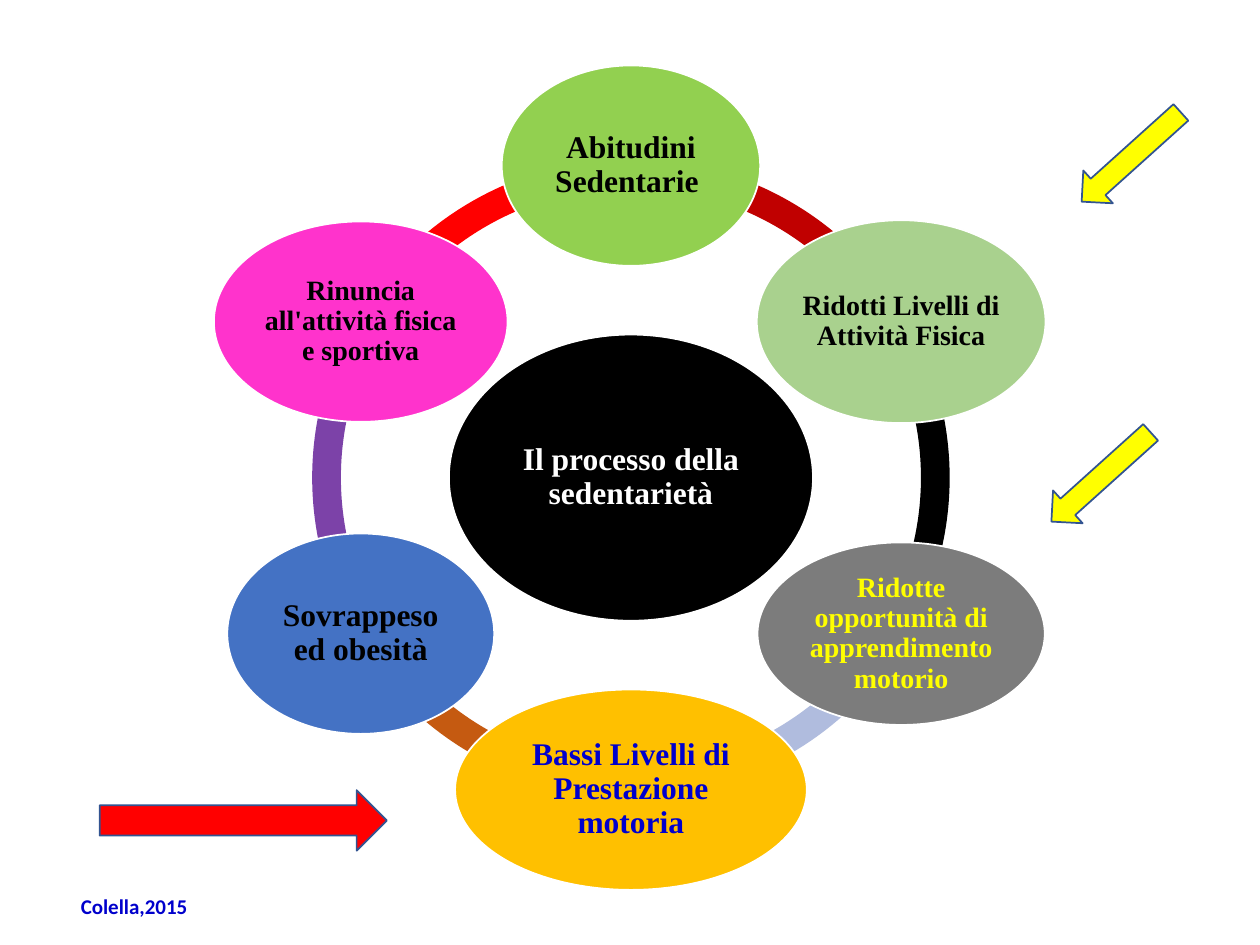
import math
from lxml import etree
from pptx import Presentation
from pptx import util as u
from pptx.dml.color import RGBColor
from pptx.enum import shapes, text
from pptx.oxml.ns import qn

BLACK = RGBColor(0x00, 0x00, 0x00)
WHITE = RGBColor(0xFF, 0xFF, 0xFF)
RED = RGBColor(0xFF, 0x00, 0x00)
DARK_RED = RGBColor(0xC0, 0x00, 0x00)
YELLOW = RGBColor(0xFF, 0xFF, 0x00)
GOLD = RGBColor(0xFF, 0xC0, 0x00)
LIME = RGBColor(0x92, 0xD0, 0x50)
SAGE = RGBColor(0xA9, 0xD1, 0x8E)
GRAY = RGBColor(0x7C, 0x7C, 0x7C)
BLUE = RGBColor(0x44, 0x72, 0xC4)
PINK = RGBColor(0xFF, 0x33, 0xCC)
PURPLE = RGBColor(0x70, 0x30, 0xA0)
RUST = RGBColor(0xC5, 0x5A, 0x11)
LAVENDER = RGBColor(0xB0, 0xBC, 0xDE)
INK = RGBColor(0x00, 0x00, 0xCC)
OUTLINE = RGBColor(0x32, 0x54, 0x91)

CX, CY, RADIUS, RING = 12.72, 9.63, 6.29, 12.85

prs = Presentation()
prs.slide_width, prs.slide_height = u.Cm(25.4), u.Cm(19.05)
s = prs.slides.add_slide(prs.slide_layouts[6])


def add_shape(kind, x, y, w, h, fill, line=None):
    sp = s.shapes.add_shape(kind, u.Cm(x), u.Cm(y), u.Cm(w), u.Cm(h))
    sp.shadow.inherit = False
    sp.fill.solid()
    sp.fill.fore_color.rgb = fill
    if line is None:
        sp.line.fill.background()
    else:
        sp.line.color.rgb = line
        sp.line.width = u.Pt(1)
    return sp


def set_text(sp, content, font, size, color):
    tf = sp.text_frame
    tf.word_wrap = True
    p = tf.paragraphs[0]
    p.text = content
    p.alignment = text.PP_ALIGN.CENTER
    p.font.name = font
    p.font.size = u.Pt(size)
    p.font.bold = True
    p.font.color.rgb = color
    return tf


for i, color in enumerate([DARK_RED, BLACK, LAVENDER, RUST, PURPLE, RED]):
    sp = add_shape(shapes.MSO_SHAPE.BLOCK_ARC, CX - RING / 2, CY - RING / 2, RING, RING, color)
    sp.adjustments[0] = (162 + 36 * i) % 216
    sp.adjustments[1] = (198 + 36 * i) % 216
    sp.adjustments[2] = 0.045
    if color == PURPLE:
        clr = sp.fill._xPr.find(qn("a:solidFill"))[0]
        etree.SubElement(clr, qn("a:alpha")).set("val", "91000")

hub = (CX, CY, 7.34, 5.77, BLACK, "Il processo della sedentarietà", 18, WHITE)
nodes = [
    (5.21, 4.04, LIME, "Abitudini Sedentarie ", 18, BLACK),
    (5.82, 4.09, SAGE, "Ridotti Livelli di Attività Fisica", 16, BLACK),
    (5.79, 3.68, GRAY, "Ridotte opportunità di apprendimento motorio", 16, YELLOW),
    (7.09, 4.04, GOLD, "Bassi Livelli di Prestazione motoria", 18, INK),
    (5.38, 4.04, BLUE, "Sovrappeso ed obesità", 18, BLACK),
    (5.92, 4.04, PINK, "Rinuncia all'attività fisica e sportiva", 16, BLACK),
]
ellipses = [hub]
for i, node in enumerate(nodes):
    angle = math.radians(60 * i)
    ellipses.append((CX + RADIUS * math.sin(angle), CY - RADIUS * math.cos(angle), *node))

for x, y, w, h, fill, label, size, color in ellipses:
    sp = add_shape(shapes.MSO_SHAPE.OVAL, x - w / 2, y - h / 2, w, h, fill, WHITE)
    tf = set_text(sp, label, "Times New Roman", size, color)
    tf.vertical_anchor = text.MSO_ANCHOR.MIDDLE
    tf.margin_left = tf.margin_right = tf.margin_top = tf.margin_bottom = u.Cm(0.06)
    tf.paragraphs[0].line_spacing = 0.9

credit = s.shapes.add_textbox(u.Cm(0.51), u.Cm(17.88), u.Cm(4.39), u.Cm(0.76))
tf = set_text(credit, "Colella,2015", "Calibri", 12, INK)
tf.auto_size = text.MSO_AUTO_SIZE.SHAPE_TO_FIT_TEXT

for x, y, w, h, fill, rotation in [
    (2.01, 15.93, 5.79, 1.22, RED, 0),
    (20.85, 9.17, 2.69, 0.89, YELLOW, 138),
    (21.46, 2.72, 2.69, 0.89, YELLOW, 138),
]:
    sp = add_shape(shapes.MSO_SHAPE.RIGHT_ARROW, x, y, w, h, fill, OUTLINE)
    sp.rotation = rotation

prs.save("out.pptx")
